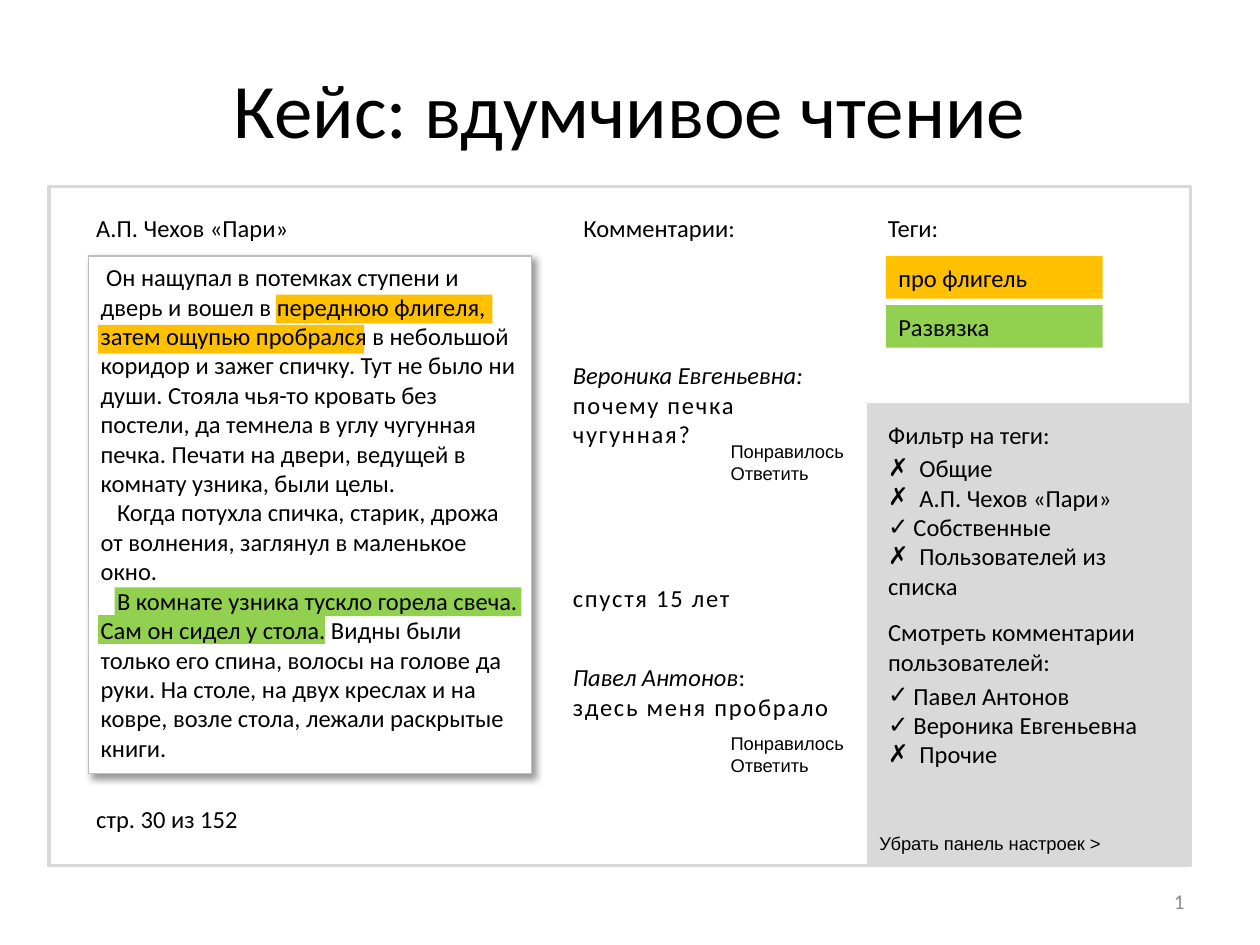
from lxml.etree import SubElement
from pptx import Presentation
from pptx.dml.color import RGBColor
from pptx.enum.shapes import MSO_SHAPE as SHAPE
from pptx.enum.text import MSO_ANCHOR as ANCHOR, MSO_AUTO_SIZE as AUTO, PP_ALIGN as ALIGN
from pptx.oxml.ns import qn
from pptx.util import Cm, Pt

BLACK, WHITE, GRAY, EDGE = "000000", "FFFFFF", "D9D9D9", "BFBFBF"
ORANGE, GREEN, NUMBER = "FFC000", "92D050", "8C8C8C"
TAB = {"✓": 0.51, "✗": 0.63}

PROSE = [
    (0.11, "Он нащупал в потемках ступени и дверь и вошел в переднюю флигеля, "
           "затем ощупью пробрался в небольшой коридор и зажег спичку. Тут не было ни "
           "души. Стояла чья-то кровать без постели, да темнела в углу чугунная печка. "
           "Печати на двери, ведущей в комнату узника, были целы."),
    (0.33, "Когда потухла спичка, старик, дрожа от волнения, заглянул в маленькое окно."),
    (0.33, "В комнате узника тускло горела свеча. Сам он сидел у стола. Видны были "
           "только его спина, волосы на голове да руки. На столе, на двух креслах и на "
           "ковре, возле стола, лежали раскрытые книги."),
]
HIGHLIGHTS = [
    (5.56, 5.94, 4.37, ORANGE),
    (1.98, 6.55, 5.36, ORANGE),
    (2.31, 11.84, 8.2, GREEN),
    (1.98, 12.4, 4.57, GREEN),
]
FILTERS = [("✗", "Общие"), ("✗", "А.П. Чехов «Пари»"), ("✓", "Собственные"),
           ("✗", "Пользователей из списка")]
READERS = [("✓", "Павел Антонов"), ("✓", "Вероника Евгеньевна"), ("✗", "Прочие")]


def rgb(value):
    return RGBColor.from_string(value)


def place(sp, x, y, w, h):
    sp.left, sp.top, sp.width, sp.height = Cm(x), Cm(y), Cm(w), Cm(h)


def style(font, size=14, name="Calibri", color=BLACK, italic=False):
    font.size, font.name, font.italic = Pt(size), name, italic
    font.color.rgb = rgb(color)


def add_run(p, text, spaced=False, **kw):
    r = p.add_run()
    r.text = text
    style(r.font, **kw)
    if spaced:
        r.font._element.set("spc", "100")


def next_paragraph(tf):
    p = tf.paragraphs[0]
    return tf.add_paragraph() if p.runs else p


def add_box(s, x, y, w, h, fill=None, line=None, width=0.75):
    sp = s.shapes.add_shape(SHAPE.RECTANGLE, Cm(x), Cm(y), Cm(w), Cm(h))
    sp.shadow.inherit = False
    if fill:
        sp.fill.solid()
        sp.fill.fore_color.rgb = rgb(fill)
    else:
        sp.fill.background()
    if line:
        sp.line.color.rgb = rgb(line)
        sp.line.width = Pt(width)
    else:
        sp.line.fill.background()
    return sp


def add_shadow(sp):
    effects = sp._element.spPr.find(qn("a:effectLst"))
    shadow = SubElement(effects, qn("a:outerShdw"), blurRad="50800", dist="38100",
                        dir="2700000", algn="tl", rotWithShape="0")
    color = SubElement(shadow, qn("a:srgbClr"), val=BLACK)
    SubElement(color, qn("a:alpha"), val="40000")


def add_text(s, x, y, w, h, *lines):
    tf = s.shapes.add_textbox(Cm(x), Cm(y), Cm(w), Cm(h)).text_frame
    tf.word_wrap = True
    for line in lines:
        p = next_paragraph(tf)
        for text, kw in line:
            add_run(p, text, **kw)
    return tf


def add_tag(s, y, text, color):
    sp = add_box(s, 17.86, y, 4.37, 0.86, fill=color)
    p = sp.text_frame.paragraphs[0]
    p.alignment = ALIGN.LEFT
    add_run(p, text)


def add_actions(s, y):
    small = {"size": 10.5, "name": "Arial"}
    add_text(s, 14.48, y, 3.58, 1.19, [("Понравилось", small)], [("Ответить", small)])


def add_page(s):
    add_shadow(add_box(s, 1.78, 5.16, 8.94, 10.44, fill=WHITE, line=EDGE))
    for x, y, w, color in HIGHLIGHTS:
        add_box(s, x, y, w, 0.58, fill=color)
    tf = add_box(s, 1.78, 5.16, 8.94, 10.44, line=EDGE).text_frame
    tf.word_wrap, tf.vertical_anchor = True, ANCHOR.TOP
    for indent, text in PROSE:
        p = next_paragraph(tf)
        p.alignment = ALIGN.LEFT
        p._p.get_or_add_pPr().set("indent", str(Cm(indent)))
        add_run(p, text)


def fill_list(s, sp, box, heading, items):
    place(sp, *box)
    s.shapes._spTree.append(sp._element)
    tf = sp.text_frame
    tf.word_wrap, tf.auto_size, tf.vertical_anchor = True, AUTO.NONE, ANCHOR.TOP
    for i, (mark, text) in enumerate([(None, heading)] + items):
        p = next_paragraph(tf)
        p.space_before = Pt(2.4 if i == 1 else 0)
        pPr = p._p.get_or_add_pPr()
        pPr.set("marL", "0")
        pPr.set("indent", "0")
        if mark:
            SubElement(pPr, qn("a:buChar"), char=mark)
            tabs = SubElement(pPr, qn("a:tabLst"))
            SubElement(tabs, qn("a:tab"), pos=str(Cm(TAB[mark])), algn="l")
            text = "\t" + text
        else:
            SubElement(pPr, qn("a:buNone"))
        add_run(p, text)


def add_slide_number(s):
    tf = add_text(s, 18.21, 17.65, 5.92, 1.02)
    tf.vertical_anchor = ANCHOR.MIDDLE
    p = tf.paragraphs[0]
    p.alignment = ALIGN.RIGHT
    add_run(p, "4", size=12, color=NUMBER)
    r = p.runs[0]._r
    field = SubElement(p._p, qn("a:fld"), type="slidenum",
                       id="{B19B0651-EE4F-4900-A07F-96A6BFA9D0F0}")
    field.extend(list(r))
    p._p.remove(r)


def main():
    prs = Presentation()
    prs.slide_width, prs.slide_height = Cm(25.4), Cm(19.05)
    s = prs.slides.add_slide(prs.slide_layouts[3])
    title, filters, readers = s.placeholders

    place(title, 1.27, 0.58, 22.86, 3.18)
    title.text_frame.vertical_anchor = ANCHOR.MIDDLE
    p = title.text_frame.paragraphs[0]
    p.alignment = ALIGN.CENTER
    add_run(p, "Кейс: вдумчивое чтение", size=44)

    add_box(s, 17.48, 8.13, 6.55, 9.32, fill=GRAY)
    add_box(s, 0.99, 3.76, 23.01, 13.69, line=GRAY, width=2)
    add_page(s)

    for x, y, w, text in [(1.69, 4.17, 8.82, "А.П. Чехов «Пари»"),
                          (11.51, 4.17, 4.95, "Комментарии:"),
                          (17.65, 4.17, 4.95, "Теги:"),
                          (1.69, 16.08, 8.82, "стр. 30 из 152")]:
        add_text(s, x, y, w, 0.86, [(text, {})])
    add_tag(s, 5.16, "про флигель", ORANGE)
    add_tag(s, 6.15, "Развязка", GREEN)

    italic, spaced = {"italic": True}, {"spaced": True}
    add_text(s, 11.3, 7.14, 5.94, 2.64, [("Вероника Евгеньевна:", italic)],
             [("почему печка чугунная?", spaced)])
    add_text(s, 11.3, 11.63, 5.56, 0.86, [("спустя 15 лет", spaced)])
    add_text(s, 11.3, 13.23, 5.94, 2.06, [("Павел Антонов", italic), (":", {})],
             [("здесь меня пробрало", spaced)])
    add_actions(s, 8.74)
    add_actions(s, 14.63)

    fill_list(s, filters, (17.65, 8.33, 6.35, 4.52), "Фильтр на теги:", FILTERS)
    fill_list(s, readers, (17.65, 12.32, 6.15, 3.33),
              "Смотреть комментарии пользователей:", READERS)
    add_text(s, 17.48, 16.66, 5.16, 0.71,
             [("Убрать панель настроек >", {"size": 10.5, "name": "Arial"})])
    add_slide_number(s)
    prs.save("out.pptx")


if __name__ == "__main__":
    main()
